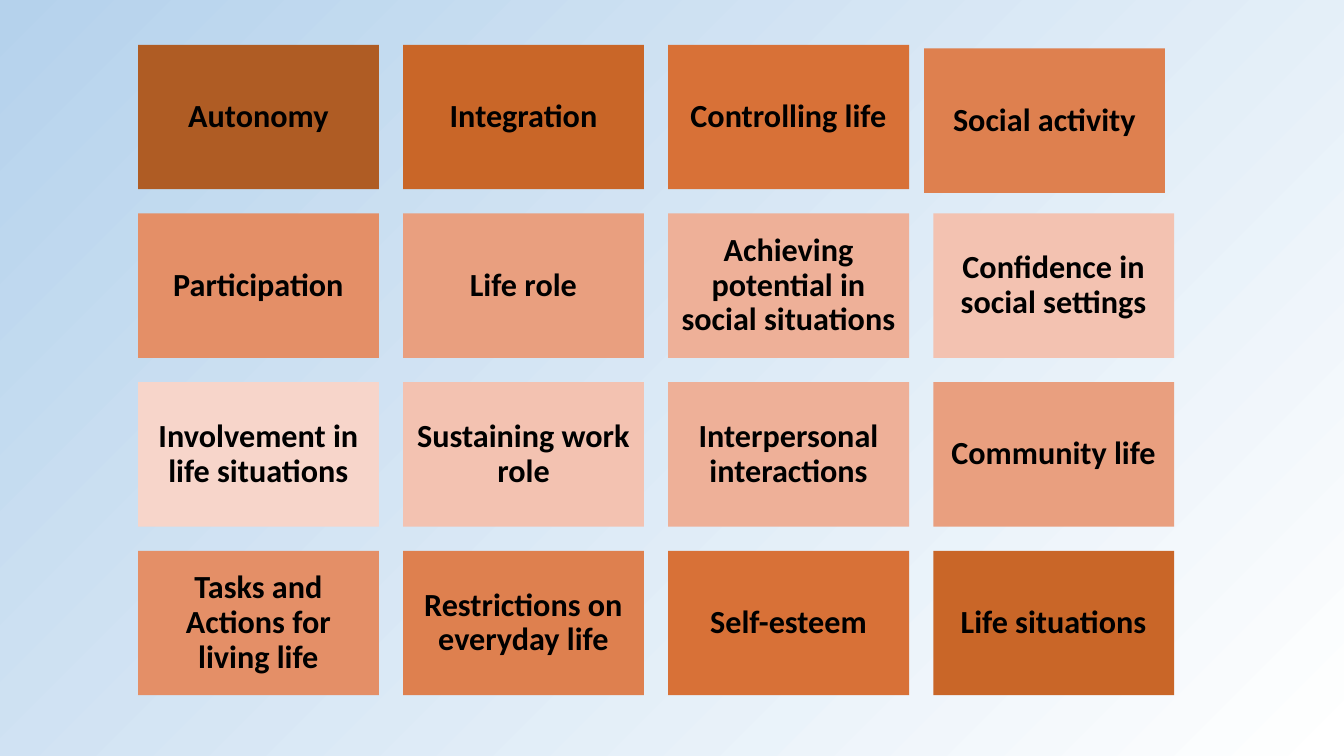
"""Build a slide with a four-by-four grid of themes of social participation."""
from pptx import Presentation
from pptx.dml.color import RGBColor
from pptx.enum.shapes import MSO_SHAPE
from pptx.enum.text import MSO_ANCHOR, PP_ALIGN
from pptx.util import Cm, Pt

THEMES = [
    "Autonomy", "Integration", "Controlling life", "Social activity",
    "Participation", "Life role", "Achieving potential in social situations",
    "Confidence in social settings",
    "Involvement in life situations", "Sustaining work role",
    "Interpersonal interactions", "Community life",
    "Tasks and Actions for living life", "Restrictions on everyday life",
    "Self-esteem", "Life situations",
]
TONES = ["AF5C24", "C96628", "D87137", "DE804F", "E48F67",
         "E99F7F", "EEB098", "F3C2B1", "F7D5CA"]
COLS = 4
LEFT, TOP = 3.48, 1.13
WIDE, HIGH = 6.07, 3.64
STEP_X, STEP_Y = 6.68, 4.25
SHIFTS = {"Social activity": (-0.23, 0.09)}


def color(code):
    return RGBColor.from_string(code)


class Board:
    font = "Calibri"
    size = 23
    ink = "000000"
    inset = 0.24

    def __init__(self, slide):
        self.slide = slide

    def backdrop(self, start, end, angle):
        fill = self.slide.background.fill
        fill.gradient()
        fill.gradient_angle = angle
        for stop, code in zip(fill.gradient_stops, (start, end)):
            stop.color.rgb = color(code)

    def tile(self, text, x, y, tone):
        box = self.slide.shapes.add_shape(
            MSO_SHAPE.RECTANGLE, Cm(x), Cm(y), Cm(WIDE), Cm(HIGH))
        box.shadow.inherit = False
        box.fill.solid()
        box.fill.fore_color.rgb = color(tone)
        box.line.fill.background()
        frame = box.text_frame
        frame.word_wrap = True
        frame.vertical_anchor = MSO_ANCHOR.MIDDLE
        frame.margin_left = frame.margin_right = Cm(self.inset)
        frame.margin_top = frame.margin_bottom = Cm(self.inset)
        line = frame.paragraphs[0]
        line.text = text
        line.alignment = PP_ALIGN.CENTER
        line.line_spacing = 0.9
        line.font.name = self.font
        line.font.size = Pt(self.size)
        line.font.bold = True
        line.font.color.rgb = color(self.ink)


def main():
    deck = Presentation()
    deck.slide_width, deck.slide_height = Cm(33.87), Cm(19.05)
    board = Board(deck.slides.add_slide(deck.slide_layouts[6]))
    board.backdrop("FFFFFF", "B5D2EC", 135)
    last = len(TONES) - 1
    for i, theme in enumerate(THEMES):
        row, col = divmod(i, COLS)
        dx, dy = SHIFTS.get(theme, (0, 0))
        tone = TONES[last - abs(last - i)]
        board.tile(theme, LEFT + col * STEP_X + dx, TOP + row * STEP_Y + dy, tone)
    deck.save("out.pptx")


if __name__ == "__main__":
    main()
